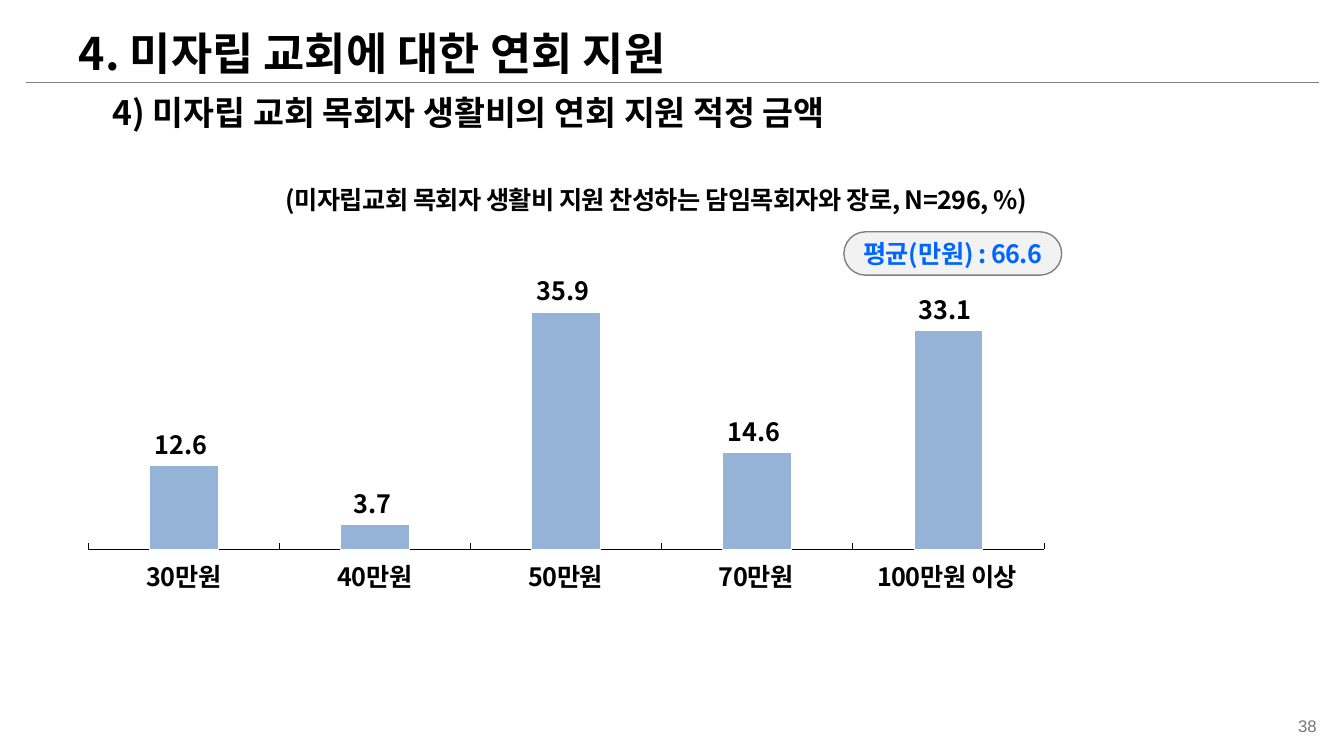
import pptx
import pptx.util
import pptx.chart.data
import pptx.enum.chart
import pptx.enum.shapes
import pptx.enum.text
import pptx.dml.color
import pptx.oxml
import pptx.oxml.ns
import lxml.etree

Inches = pptx.util.Inches
Pt = pptx.util.Pt
PP = pptx.enum.text.PP_ALIGN
ANCHOR = pptx.enum.text.MSO_ANCHOR
qn = pptx.oxml.ns.qn

TITLE = "4. 미자립 교회에 대한 연회 지원"
SUBTITLE = "4) 미자립 교회 목회자 생활비의 연회 지원 적정 금액"
CAPTION = "(미자립교회 목회자 생활비 지원 찬성하는 담임목회자와 장로, N=296, %)"
AVERAGE = "평균(만원) : 66.6"
PAGE = "38"
SUPPORT = [
    ("30만원", 12.6),
    ("40만원", 3.7),
    ("50만원", 35.9),
    ("70만원", 14.6),
    ("100만원 이상", 33.1),
]
THEME = {
    "font": "Noto Sans CJK KR", "page_font": "Arial",
    "ink": "000000", "rule": "808080", "page": "777777", "bar": "95B3D7",
    "paper": "FFFFFF", "badge": "F2F2F2", "accent": "0066FF",
    "title": 32, "subtitle": 24, "body": 18, "small": 12,
}
SIDES = ("margin_left", "margin_top", "margin_right", "margin_bottom")


def rgb(name):
    return pptx.dml.color.RGBColor.from_string(THEME[name])


def box(left, top, width, height):
    return [Inches(v) for v in (left, top, width, height)]


def set_attrs(target, values):
    for name, value in values.items():
        setattr(target, name, value)


def style_font(font, size, color="ink", bold=True, face="font"):
    set_attrs(font, {"size": Pt(THEME[size]), "bold": bold, "name": THEME[face]})
    font.color.rgb = rgb(color)


def write(tf, text, size, color="ink", align=PP.LEFT, spacing=None, bold=True, face="font"):
    p = tf.paragraphs[0]
    p.alignment = align
    r = p.add_run()
    r.text = text
    style_font(r.font, size, color, bold, face)
    props = r.font._element
    ea = lxml.etree.Element(qn("a:ea"), typeface=THEME[face])
    props.find(qn("a:latin")).addnext(ea)
    if spacing is not None:
        props.set("spc", str(round(spacing * 100)))
    return p


def set_frame(tf, anchor=ANCHOR.TOP, insets=(0.1, 0.05, 0.1, 0.05)):
    set_attrs(tf, {"word_wrap": True, "vertical_anchor": anchor,
                   "auto_size": pptx.enum.text.MSO_AUTO_SIZE.NONE})
    set_attrs(tf, dict(zip(SIDES, map(Inches, insets))))


def add_text(s, place, text, size, **fmt):
    tf = s.shapes.add_textbox(*box(*place)).text_frame
    set_frame(tf)
    write(tf, text, size, **fmt)
    return tf


def add_rule(s):
    line = s.shapes.add_connector(pptx.enum.shapes.MSO_CONNECTOR.STRAIGHT,
                                  *box(0.26, 0.82, 13.08, 0.82))
    line.line.color.rgb = rgb("rule")
    line.line.width = Pt(1)
    lxml.etree.SubElement(line._element.spPr, qn("a:effectLst"))


def add_support_chart(s):
    xl = pptx.enum.chart
    data = pptx.chart.data.CategoryChartData(number_format="0.0")
    data.categories = [str(i + 1) for i in range(len(SUPPORT))]
    data.add_series("Series 1", [value for _, value in SUPPORT])
    chart = s.shapes.add_chart(xl.XL_CHART_TYPE.COLUMN_CLUSTERED,
                               *box(0.68, 1.83, 9.85, 3.73), data).chart
    set_attrs(chart, {"has_legend": False, "has_title": False})
    style_font(chart.font, "body")

    cat, val = chart.category_axis, chart.value_axis
    hidden = {"tick_label_position": xl.XL_TICK_LABEL_POSITION.NONE,
              "has_major_gridlines": False,
              "minor_tick_mark": xl.XL_TICK_MARK.NONE}
    set_attrs(cat, {**hidden, "major_tick_mark": xl.XL_TICK_MARK.INSIDE})
    set_attrs(val, {**hidden, "major_tick_mark": xl.XL_TICK_MARK.OUTSIDE,
                    "minimum_scale": 0, "maximum_scale": 50})
    cat.format.line.color.rgb = rgb("ink")
    cat.format.line.width = Pt(0.25)
    val.format.line.fill.background()

    plot = chart.plots[0]
    set_attrs(plot, {"gap_width": 180, "overlap": -5, "vary_by_categories": False,
                     "has_data_labels": True})
    set_attrs(plot.data_labels, {"show_value": True, "number_format": "0.0_ ",
                                 "number_format_is_linked": False,
                                 "position": xl.XL_LABEL_POSITION.OUTSIDE_END})
    style_font(plot.data_labels.font, "body")
    bars = plot.series[0].format
    bars.fill.solid()
    bars.fill.fore_color.rgb = rgb("bar")
    bars.line.color.rgb = rgb("paper")
    bars.line.width = Pt(0.75)

    area = chart._chartSpace.chart.plotArea
    for old in area.findall(qn("c:layout")):
        area.remove(old)
    layout = lxml.etree.Element(qn("c:layout"))
    manual = lxml.etree.SubElement(layout, qn("c:manualLayout"))
    for tag, value in (("layoutTarget", "inner"), ("xMode", "edge"), ("yMode", "edge"),
                       ("x", 0.02), ("y", 0.092), ("w", 0.962), ("h", 0.878)):
        lxml.etree.SubElement(manual, qn("c:" + tag), val=str(value))
    area.insert(0, layout)


def add_amount_table(s):
    table = s.shapes.add_table(1, len(SUPPORT), *box(0.88, 5.48, 9.46, 0.47)).table
    set_attrs(table, {"first_row": False, "horz_banding": False})
    for cell, (amount, _) in zip(table.rows[0].cells, SUPPORT):
        cell.fill.background()
        set_attrs(cell, dict(zip(SIDES, map(Inches, (0.01, 0.01, 0.01, 0)))))
        p = write(cell.text_frame, amount, "body", align=PP.CENTER, spacing=-0.4)
        p.line_spacing = 1.1


def add_average_badge(s):
    sp = s.shapes.add_shape(pptx.enum.shapes.MSO_SHAPE.ROUNDED_RECTANGLE,
                            *box(8.37, 2.3, 2.16, 0.43))
    sp.adjustments[0] = 0.5
    sp.shadow.inherit = False
    sp.fill.solid()
    sp.fill.fore_color.rgb = rgb("badge")
    sp.line.color.rgb = rgb("rule")
    sp.line.width = Pt(1)
    set_frame(sp.text_frame, ANCHOR.MIDDLE, (0, 0, 0, 0))
    write(sp.text_frame, AVERAGE, "body", "accent", PP.CENTER, -0.4)


def main():
    prs = pptx.Presentation()
    set_attrs(prs, {"slide_width": Inches(13.33), "slide_height": Inches(7.5)})
    s = prs.slides.add_slide(prs.slide_layouts[5])
    title = s.shapes.title
    set_attrs(title, dict(zip(("left", "top", "width", "height"),
                              box(0.68, 0.2, 6.91, 0.64))))
    set_frame(title.text_frame)
    write(title.text_frame, TITLE, "title")

    page = add_text(s, (12.45, 7.05, 0.67, 0.3), PAGE, "small", color="page",
                    align=PP.RIGHT, bold=False, face="page_font")
    set_frame(page, ANCHOR.BOTTOM, (0.02, 0.05, 0.06, 0.05))
    add_rule(s)
    add_support_chart(s)
    add_amount_table(s)
    add_text(s, (2.29, 1.78, 8.43, 0.4), CAPTION, "body", align=PP.CENTER, spacing=-0.4)
    add_text(s, (1.02, 0.86, 8.2, 0.5), SUBTITLE, "subtitle")
    add_average_badge(s)
    prs.save("out.pptx")


if __name__ == "__main__":
    main()
